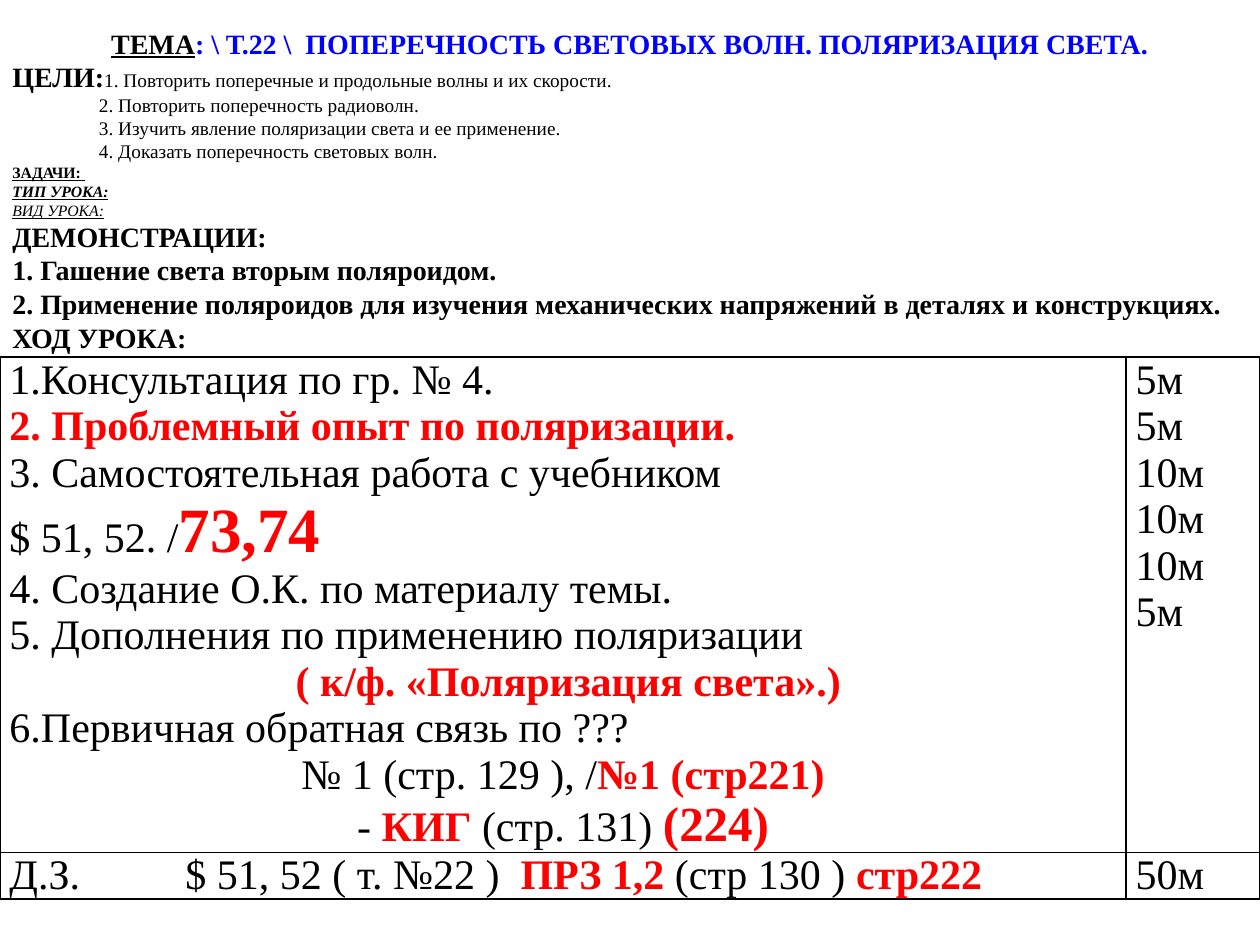
from lxml.etree import SubElement
from pptx import Presentation
from pptx.dml.color import RGBColor
from pptx.enum.text import MSO_ANCHOR, MSO_AUTO_SIZE, PP_ALIGN
from pptx.oxml.ns import qn
from pptx.util import Pt

BLACK = RGBColor(0, 0, 0)
RED = RGBColor(255, 0, 0)
BLUE = RGBColor(0, 0, 255)
FONT = "Times New Roman"
LEFT, CENTER = PP_ALIGN.LEFT, PP_ALIGN.CENTER

# Run styles: size, colour, then bold, italic and underline marks
HEADING = (16, BLACK, "b")
TOPIC_LABEL = (16, BLACK, "bu")
TOPIC = (16, BLUE, "b")
GOAL = (11, BLACK, "")
STEP = (24, BLACK, "")
KEY = (24, RED, "b")
KEY_LARGE = (28, RED, "b")
KEY_HUGE = (36, RED, "b")

# Paragraphs: alignment, left indent, runs
GOAL_INDENT = 49.5
INTRO = [
    (CENTER, 0, [("ТЕМА", TOPIC_LABEL),
                 (": \\ Т.22 \\  ПОПЕРЕЧНОСТЬ СВЕТОВЫХ ВОЛН. ПОЛЯРИЗАЦИЯ СВЕТА.", TOPIC)]),
    (LEFT, 0, [("ЦЕЛИ:", HEADING),
               ("1. Повторить поперечные и продольные волны и их скорости.", GOAL)]),
    (LEFT, GOAL_INDENT, [("2. Повторить поперечность радиоволн.", GOAL)]),
    (LEFT, GOAL_INDENT, [("3. Изучить явление поляризации света и ее применение.", GOAL)]),
    (LEFT, GOAL_INDENT, [("4. Доказать поперечность световых волн.", GOAL)]),
    (LEFT, 0, [("ЗАДАЧИ: ", (9, BLACK, "bu"))]),
    (LEFT, 0, [("ТИП УРОКА:", (9, BLACK, "biu"))]),
    (LEFT, 0, [("ВИД УРОКА:", (9, BLACK, "iu"))]),
    (LEFT, 0, [("ДЕМОНСТРАЦИИ:", HEADING)]),
    (LEFT, 0, [("1. Гашение света вторым поляроидом.", HEADING)]),
    (LEFT, 0, [("2. Применение поляроидов для изучения механических напряжений "
                "в деталях и конструкциях.", HEADING)]),
    (LEFT, 0, [("ХОД УРОКА:", HEADING)]),
]
LESSON_STEPS = [
    (LEFT, 0, [("1.Консультация по гр. № 4.", STEP)]),
    (LEFT, 0, [("2. Проблемный опыт по поляризации.", KEY)]),
    (LEFT, 0, [("3. Самостоятельная работа с учебником", STEP)]),
    (LEFT, 0, [("$ 51, 52. /", STEP), ("73,74", KEY_HUGE)]),
    (LEFT, 0, [("4. Создание О.К. по материалу темы.", STEP)]),
    (LEFT, 0, [("5. Дополнения по применению поляризации", STEP)]),
    (CENTER, 0, [(" ", STEP), ("( к/ф. «Поляризация света».)", KEY)]),
    (LEFT, 0, [("6.Первичная обратная связь по ???", STEP)]),
    (CENTER, 0, [("№ 1 (стр. 129 ), /", STEP), ("№1 (стр221)", KEY)]),
    (CENTER, 0, [("-", STEP), (" КИГ ", KEY), ("(стр. 131) ", STEP), ("(224)", KEY_LARGE)]),
]
STEP_TIMES = [(LEFT, 0, [(time, STEP)]) for time in ("5м", "5м", "10м", "10м", "10м", "5м")]
HOMEWORK = [(LEFT, 0, [("Д.З.\t$ 51, 52 ( т. №22 )  ", STEP), ("ПРЗ 1,2", KEY),
                       (" (стр 130 ) ", STEP), ("стр222", KEY)])]
TOTAL_TIME = [(LEFT, 0, [("50м", STEP)])]

TABLE_ROWS = [(LESSON_STEPS, STEP_TIMES), (HOMEWORK, TOTAL_TIME)]
COLUMN_WIDTHS = (643.5, 76.5)
ROW_HEIGHTS = (283, 26.5)
HOMEWORK_TAB = 100.5


def write_paragraphs(frame, paragraphs):
    for index, (alignment, indent, runs) in enumerate(paragraphs):
        paragraph = frame.paragraphs[0] if index == 0 else frame.add_paragraph()
        paragraph.alignment = alignment
        if indent:
            paragraph._p.get_or_add_pPr().set("marL", str(Pt(indent)))
        for text, (size, color, marks) in runs:
            run = paragraph.add_run()
            run.text = text
            font = run.font
            font.name, font.size = FONT, Pt(size)
            font.color.rgb = color
            font.bold, font.italic, font.underline = (mark in marks for mark in "biu")


def add_borders(cell):
    properties = cell._tc.get_or_add_tcPr()
    for side in ("a:lnL", "a:lnR", "a:lnT", "a:lnB"):
        line = SubElement(properties, qn(side), w=str(Pt(1)))
        fill = SubElement(line, qn("a:solidFill"))
        SubElement(fill, qn("a:srgbClr"), val=str(BLACK))


presentation = Presentation()
presentation.slide_width, presentation.slide_height = Pt(720), Pt(540)
slide = presentation.slides.add_slide(presentation.slide_layouts[6])

# Lesson plan table
shape = slide.shapes.add_table(2, 2, 0, Pt(204), Pt(720), Pt(sum(ROW_HEIGHTS)))
table = shape.table
table.first_row = table.horz_banding = False
for column, width in zip(table.columns, COLUMN_WIDTHS):
    column.width = Pt(width)
for row, height, contents in zip(table.rows, ROW_HEIGHTS, TABLE_ROWS):
    row.height = Pt(height)
    for cell, paragraphs in zip(row.cells, contents):
        cell.margin_left = cell.margin_right = Pt(5.4)
        cell.margin_top = cell.margin_bottom = 0
        add_borders(cell)
        cell.fill.background()
        write_paragraphs(cell.text_frame, paragraphs)

# Tab stop between the homework label and its tasks
homework = table.cell(1, 0).text_frame.paragraphs[0]
tabs = SubElement(homework._p.get_or_add_pPr(), qn("a:tabLst"))
SubElement(tabs, qn("a:tab"), pos=str(Pt(HOMEWORK_TAB)), algn="l")

# Topic, goals and demonstrations
intro = slide.shapes.add_textbox(0, Pt(6.5), Pt(720), Pt(204)).text_frame
intro.word_wrap = True
intro.auto_size = MSO_AUTO_SIZE.SHAPE_TO_FIT_TEXT
intro.vertical_anchor = MSO_ANCHOR.MIDDLE
write_paragraphs(intro, INTRO)

presentation.save("out.pptx")
